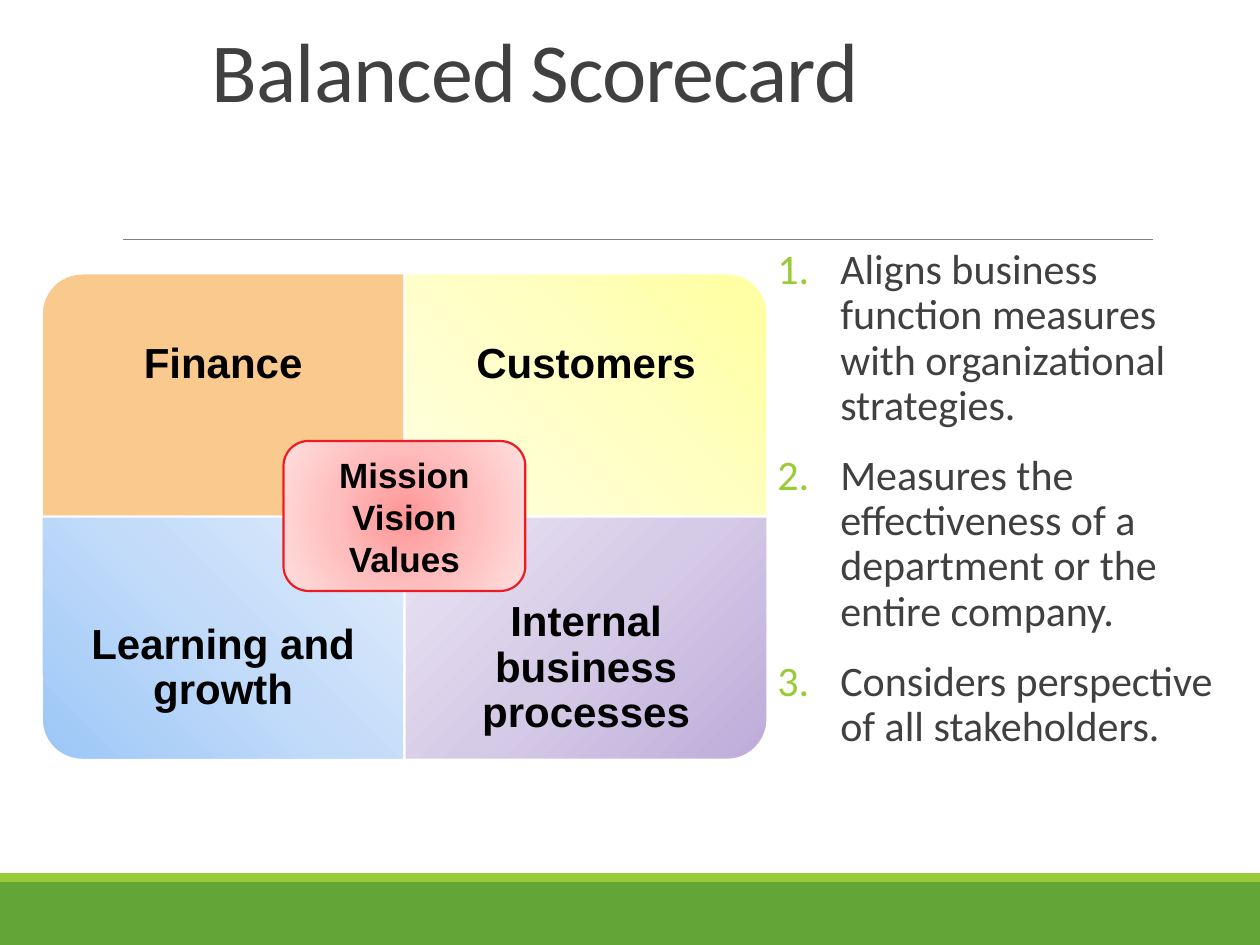
from dataclasses import dataclass

from lxml.etree import SubElement
from pptx import Presentation
from pptx.dml.color import RGBColor as RGB
from pptx.enum.shapes import MSO_CONNECTOR as CONNECTOR, MSO_SHAPE as SHAPE
from pptx.enum.text import MSO_ANCHOR as ANCHOR, PP_ALIGN as ALIGN
from pptx.oxml.ns import qn
from pptx.util import Pt


@dataclass(frozen=True)
class Theme:
    heading_font: str = "Calibri"
    diagram_font: str = "Arial"
    title_size: int = 48
    gap_size: int = 36
    body_size: int = 24
    center_size: int = 20
    text: str = "404040"
    label: str = "000000"
    band: str = "63A537"
    accent: str = "99CB38"
    rule: str = "808080"
    divider: str = "FFFFFF"
    finance: str = "F7941D"
    customers: tuple = ("FFFFA0", "FFFFC5", "FFFFE3")
    learning: tuple = ("9CC7F7", "C2DBF9", "E1EDFB")
    processes: tuple = ("BEABDA", "D6CBE7", "EAE5F3")
    center: tuple = ("FF9596", "FFBEBE", "FFDFDF")
    center_line: str = "ED1C24"


THEME = Theme()
GRID_LEFT, GRID_TOP = 23.8, 156.2
CELL_WIDTH, CELL_HEIGHT = 207.4, 139


def fill_solid(shape, color, opacity=100):
    shape.fill.solid()
    shape.fill.fore_color.rgb = RGB.from_string(color)
    if opacity < 100:
        color_node = shape.fill._xPr.find(qn("a:solidFill"))[0]
        SubElement(color_node, qn("a:alpha"), val=str(opacity * 1000))


def fill_gradient(shape, colors, radial=False):
    """Spread colors from the top right corner, or from the middle if radial."""
    shape.fill.gradient()
    gradient = shape.fill._xPr.find(qn("a:gradFill"))
    for child in list(gradient):
        gradient.remove(child)
    stops = SubElement(gradient, qn("a:gsLst"))
    for position, color in zip((0, 50000, 100000), colors):
        stop = SubElement(stops, qn("a:gs"), pos=str(position))
        SubElement(stop, qn("a:srgbClr"), val=color)
    if radial:
        circle = SubElement(gradient, qn("a:path"), path="circle")
        SubElement(circle, qn("a:fillToRect"), l="50000", t="50000", r="50000", b="50000")
    else:
        SubElement(gradient, qn("a:lin"), ang=str(135 * 60000), scaled="0")


def add_shape(page, kind, left, top, width, height, line=None):
    shape = page.shapes.add_shape(kind, Pt(left), Pt(top), Pt(width), Pt(height))
    shape.shadow.inherit = False
    if line:
        shape.line.color.rgb = RGB.from_string(line)
        shape.line.width = Pt(1.25)
    else:
        shape.line.fill.background()
    return shape


def add_text_frame(page, left, top, width, height, anchor, inset_x, inset_y):
    box = page.shapes.add_textbox(Pt(left), Pt(top), Pt(width), Pt(height))
    frame = box.text_frame
    frame.word_wrap = True
    frame.vertical_anchor = anchor
    frame.margin_left = frame.margin_right = Pt(inset_x)
    frame.margin_top = frame.margin_bottom = Pt(inset_y)
    return frame


def add_paragraphs(frame, lines):
    """Write one paragraph a line and yield each for styling."""
    for index, line in enumerate(lines):
        para = frame.add_paragraph() if index else frame.paragraphs[0]
        para.text = line
        yield para


def style_font(font, name, size, color, bold=False):
    font.name = name
    font.size = Pt(size)
    font.bold = bold
    font.color.rgb = RGB.from_string(color)


def add_label(page, lines, left, top, width, height, inset, size, spacing):
    frame = add_text_frame(page, left, top, width, height, ANCHOR.MIDDLE, inset, inset)
    for para in add_paragraphs(frame, lines):
        para.alignment = ALIGN.CENTER
        para.line_spacing = spacing
        style_font(para.font, THEME.diagram_font, size, THEME.label, bold=True)


def add_quadrant(page, column, row, turn):
    """Add a cell whose rounded corner, top right at first, is turned outward."""
    left = GRID_LEFT + column * CELL_WIDTH
    top = GRID_TOP + row * CELL_HEIGHT
    width, height = CELL_WIDTH, CELL_HEIGHT
    if turn % 180:
        width, height = height, width
    shape = add_shape(page, SHAPE.ROUND_1_RECTANGLE, left + (CELL_WIDTH - width) / 2,
                      top + (CELL_HEIGHT - height) / 2, width, height, THEME.divider)
    shape.rotation = turn
    return shape


def add_quadrant_label(page, text, column, row):
    """Center the label in the outer three quarters of its cell."""
    height = CELL_HEIGHT * 0.75
    top = GRID_TOP + row * (2 * CELL_HEIGHT - height)
    add_label(page, [text], GRID_LEFT + column * CELL_WIDTH, top, CELL_WIDTH, height,
              13.5, THEME.body_size, 0.9)


def add_scorecard(page):
    quadrants = (
        ("Finance", 0, 0, 270, THEME.finance),
        ("Customers", 1, 0, 0, THEME.customers),
        ("Learning and growth", 0, 1, 180, THEME.learning),
        ("Internal business processes", 1, 1, 90, THEME.processes),
    )
    for text, column, row, turn, paint in quadrants:
        shape = add_quadrant(page, column, row, turn)
        if isinstance(paint, str):
            fill_solid(shape, paint, opacity=50)
        else:
            fill_gradient(shape, paint)
        add_quadrant_label(page, text, column, row)
    core = add_shape(page, SHAPE.ROUNDED_RECTANGLE, 162, 252, 138.2, 85.7, THEME.center_line)
    fill_gradient(core, THEME.center, radial=True)
    add_label(page, ["Mission", "Vision", "Values"], 166.3, 256.3, 129.6, 77.8,
              6, THEME.center_size, 1.0)


def add_frame(page):
    """Add the bottom bands and the rule below the title."""
    for top, height, color in ((504, 36, THEME.band), (499, 5, THEME.accent)):
        fill_solid(add_shape(page, SHAPE.RECTANGLE, 0, top, 720, height), color)
    rule = page.shapes.add_connector(CONNECTOR.STRAIGHT, Pt(70.5), Pt(136.8), Pt(659), Pt(136.8))
    rule.line.color.rgb = RGB.from_string(THEME.rule)
    rule.line.width = Pt(0.5)
    SubElement(rule._element.spPr, qn("a:effectLst"))


def add_title(page):
    frame = add_text_frame(page, 113.8, 0, 588, 72, ANCHOR.BOTTOM, 7.2, 3.6)
    para = frame.paragraphs[0]
    para.line_spacing = 0.85
    for text, size, bold in (("Balanced", THEME.title_size, False),
                             (" ", THEME.gap_size, True),
                             ("Scorecard", THEME.title_size, False)):
        span = para.add_run()
        span.text = text
        style_font(span.font, THEME.heading_font, size, THEME.text, bold)
        span.font._element.set("spc", "-50")


def number_paragraph(para):
    properties = para._p.get_or_add_pPr()
    properties.set("marL", str(Pt(36)))
    properties.set("indent", str(-Pt(36)))
    color = SubElement(properties, qn("a:buClr"))
    SubElement(color, qn("a:srgbClr"), val=THEME.accent)
    SubElement(properties, qn("a:buFont"), typeface="+mj-lt")
    SubElement(properties, qn("a:buAutoNum"), type="arabicPeriod")


def add_benefits(page, lines):
    frame = add_text_frame(page, 444.2, 138.2, 252, 318.2, ANCHOR.TOP, 0, 3.6)
    for index, para in enumerate(add_paragraphs(frame, lines)):
        number_paragraph(para)
        para.line_spacing = 0.9
        para.space_before = Pt(12 if index else 0)
        para.space_after = Pt(2)
        style_font(para.font, THEME.heading_font, THEME.body_size, THEME.text)


def main():
    deck = Presentation()
    deck.slide_width, deck.slide_height = Pt(720), Pt(540)
    page = deck.slides.add_slide(deck.slide_layouts[6])
    add_frame(page)
    add_title(page)
    add_benefits(page, (
        "Aligns business function measures with organizational strategies.",
        "Measures the effectiveness of a department or the entire company.",
        "Considers perspective of all stakeholders.",
    ))
    add_scorecard(page)
    deck.save("out.pptx")


if __name__ == "__main__":
    main()
